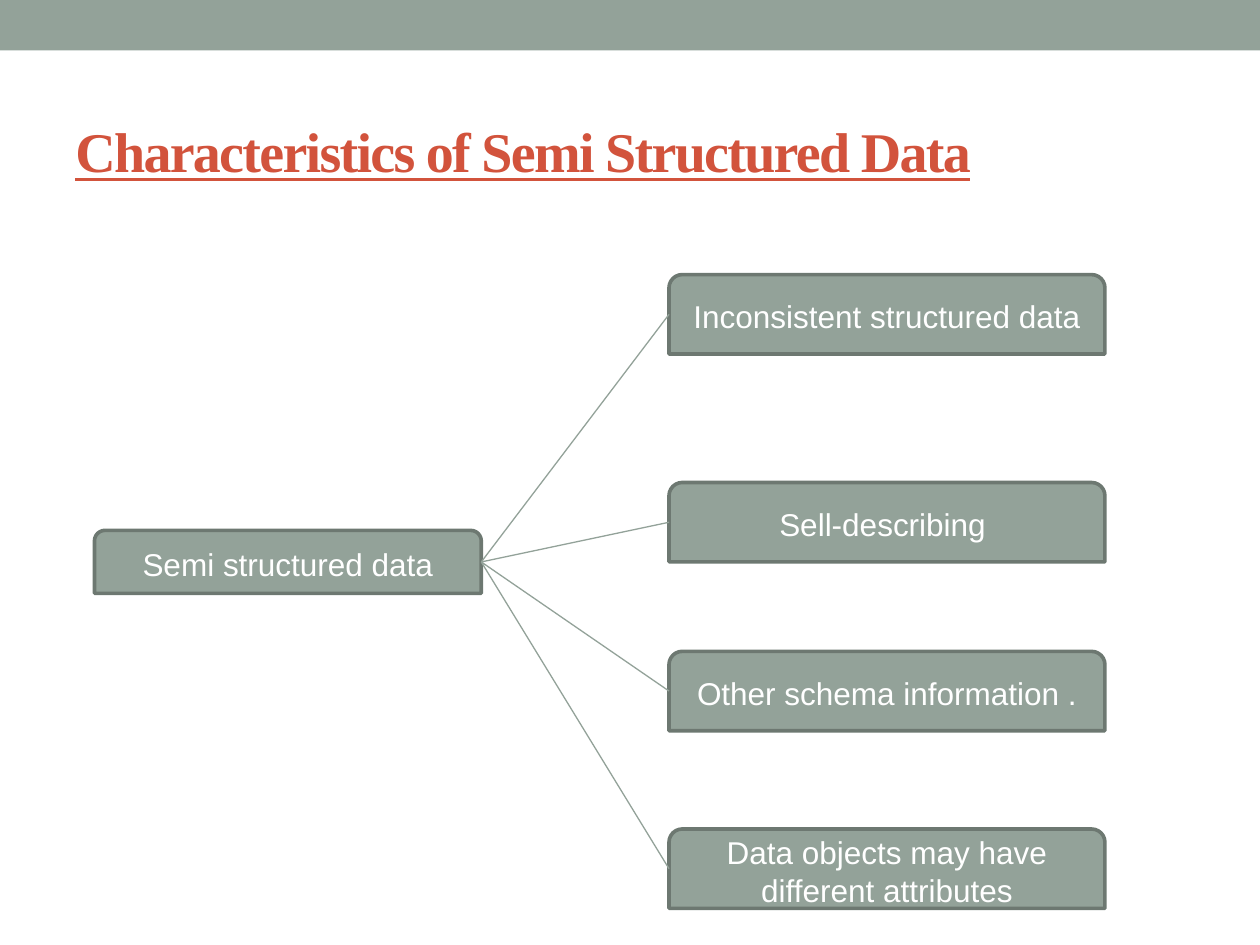
from dataclasses import dataclass

from lxml import etree
from pptx import Presentation
from pptx.dml.color import RGBColor
from pptx.enum.shapes import MSO_CONNECTOR, MSO_SHAPE
from pptx.enum.text import MSO_ANCHOR, PP_ALIGN
from pptx.oxml.ns import qn
from pptx.util import Inches, Pt

RECT = MSO_SHAPE.RECTANGLE
ROUND_TOP = MSO_SHAPE.ROUND_2_SAME_RECTANGLE
STRAIGHT = MSO_CONNECTOR.STRAIGHT
MIDDLE = MSO_ANCHOR.MIDDLE
CENTER = PP_ALIGN.CENTER

SAGE, EDGE, RED, WHITE = "93A299", "6D7871", "D2533C", "FFFFFF"


@dataclass
class Node:
    text: str
    left: float
    top: float
    width: float
    height: float

    @property
    def middle(self) -> float:
        return self.top + self.height / 2

    @property
    def right(self) -> float:
        return self.left + self.width


def color(value: str) -> RGBColor:
    return RGBColor.from_string(value)


def add_band(s) -> None:
    sp = s.shapes.add_shape(RECT, 0, 0, Inches(10), Inches(0.4))
    sp.shadow.inherit = False
    sp.fill.solid()
    sp.fill.fore_color.rgb = color(SAGE)
    sp.line.fill.background()


def add_title(s, text: str) -> None:
    sp = s.shapes.add_textbox(Inches(0.5), Inches(0.77), Inches(9), Inches(0.85))
    tf = sp.text_frame
    tf.word_wrap = True
    tf.vertical_anchor = MIDDLE
    tf.text = text
    r = tf.paragraphs[0].runs[0]
    r.font.name = "Times New Roman"
    r.font.size = Pt(32)
    r.font.bold = True
    r.font.underline = True
    r.font.color.rgb = color(RED)
    r.font._element.set("spc", "-100")  # tighter letters, in 1/100 pt


def add_node(s, node: Node) -> None:
    sp = s.shapes.add_shape(ROUND_TOP, Inches(node.left), Inches(node.top),
                            Inches(node.width), Inches(node.height))
    sp.shadow.inherit = False
    sp.fill.solid()
    sp.fill.fore_color.rgb = color(SAGE)
    sp.line.color.rgb = color(EDGE)
    sp.line.width = Pt(2.08)
    tf = sp.text_frame
    tf.word_wrap = True
    tf.vertical_anchor = MIDDLE
    tf.text = node.text
    p = tf.paragraphs[0]
    p.alignment = CENTER
    r = p.runs[0]
    r.font.name = "Arial"
    r.font.size = Pt(18)
    r.font.color.rgb = color(WHITE)


def add_link(s, start: Node, end: Node) -> None:
    cx = s.shapes.add_connector(STRAIGHT, Inches(start.right), Inches(start.middle),
                                Inches(end.left), Inches(end.middle))
    cx.line.color.rgb = color(SAGE)
    cx.line.width = Pt(0.75)
    etree.SubElement(cx._element.spPr, qn("a:effectLst"))


ROOT = Node("Semi structured data", 0.75, 4.21, 3.07, 0.5)
TRAITS = [Node(text, 5.31, top, 3.46, 0.63) for text, top in (
    ("Inconsistent structured data", 2.18),
    ("Sell-describing ", 3.83),
    ("Other schema information .", 5.17),
    ("Data objects may have different attributes", 6.58),
)]


def main() -> None:
    prs = Presentation()
    prs.slide_width, prs.slide_height = Inches(10), Inches(7.5)
    s = prs.slides.add_slide(prs.slide_layouts[6])

    # Heading
    add_band(s)
    add_title(s, "Characteristics of Semi Structured Data")

    # Tree: boxes first, links on top
    for node in [ROOT, *TRAITS]:
        add_node(s, node)
    for trait in TRAITS:
        add_link(s, ROOT, trait)

    prs.save("out.pptx")


if __name__ == "__main__":
    main()
